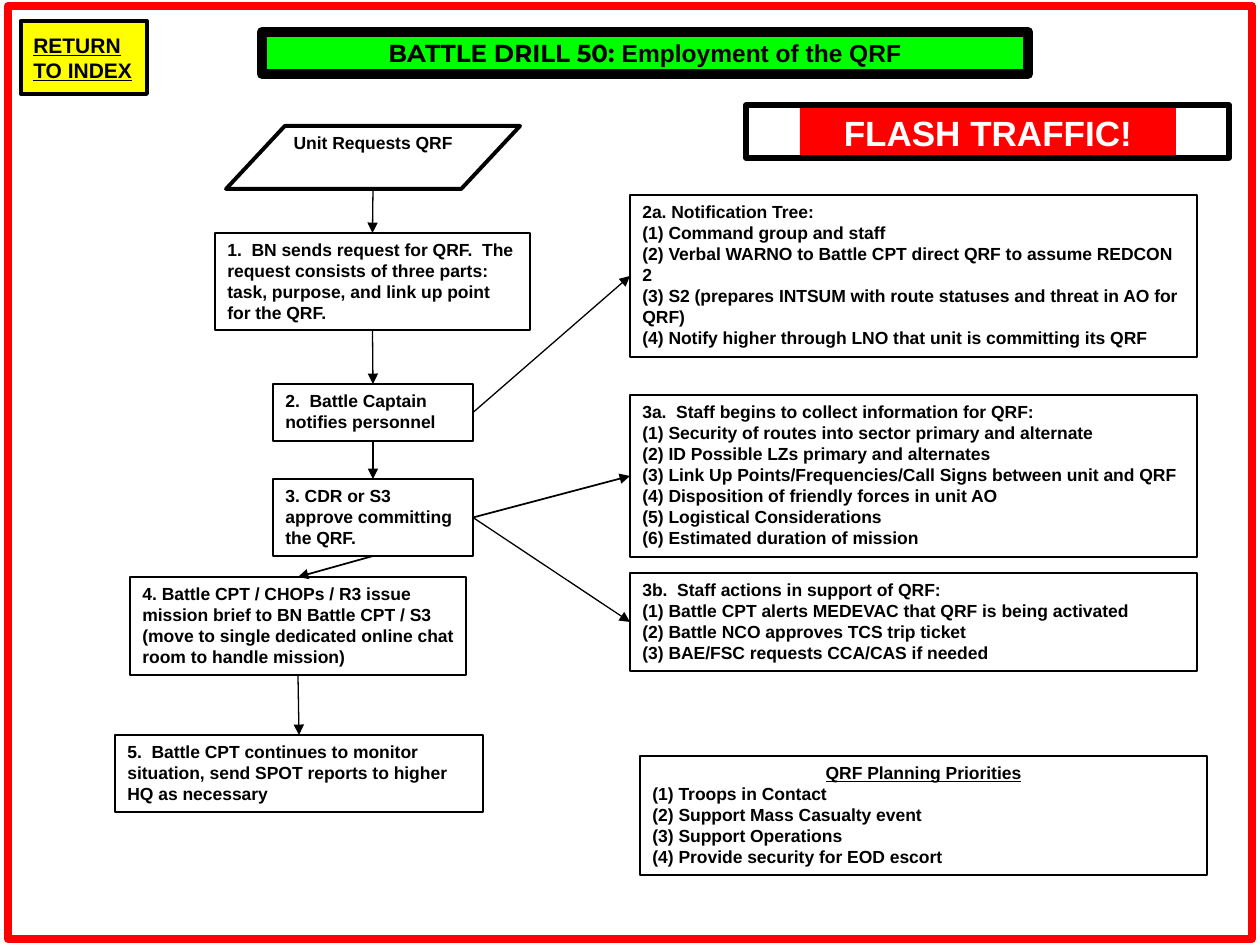
from lxml import etree
from pptx import Presentation
from pptx import util as u
from pptx.dml.color import RGBColor
from pptx.enum import shapes, text
from pptx.oxml.ns import qn

PX = 914400 / 126
RECT = shapes.MSO_SHAPE.RECTANGLE
SLANTED = shapes.MSO_SHAPE.FLOWCHART_DATA
LEFT, CENTER = text.PP_ALIGN.LEFT, text.PP_ALIGN.CENTER
TOP, MIDDLE = text.MSO_ANCHOR.TOP, text.MSO_ANCHOR.MIDDLE

TITLE = [("BATTLE DRILL 50:", "Montserrat"), (" Employment of the QRF", "Arial")]
TITLE_AREA = (262, 32, 766, 42)
BORDER_AREA = (8, 6, 1244, 933)
INDEX, INDEX_AREA = ["RETURN", "TO INDEX"], (21, 21, 126, 73)
FLASH, FLASH_AREA = ["FLASH TRAFFIC!"], (800, 105, 376, 54)
FLASH_FRAME_AREA = (746, 105, 483, 53)
REQUEST, REQUEST_AREA = ["Unit Requests QRF"], (226, 126, 294, 63)

# step: (left, top, width, height), paragraphs
STEPS = {
    "1": ((215, 233, 315, 97), [
        "1.  BN sends request for QRF.  The request consists of three parts: "
        "task, purpose, and link up point for the QRF."]),
    "2": ((273, 384, 200, 57), ["2.  Battle Captain notifies personnel"]),
    "3": ((273, 479, 200, 77), ["3. CDR or S3 approve committing the QRF."]),
    "4": ((130, 577, 336, 98), [
        "4. Battle CPT / CHOPs / R3 issue mission brief to BN Battle CPT / S3 "
        "(move to single dedicated online chat room to handle mission)"]),
    "5": ((115, 735, 368, 77), [
        "5.  Battle CPT continues to monitor situation, send SPOT reports to "
        "higher HQ as necessary"]),
    "2a": ((630, 195, 567, 162), [
        "2a. Notification Tree:",
        "(1) Command group and staff",
        "(2) Verbal WARNO to Battle CPT direct QRF to assume REDCON 2",
        "(3) S2 (prepares INTSUM with route statuses and threat in AO for QRF)",
        "(4) Notify higher through LNO that unit is committing its QRF"]),
    "3a": ((630, 395, 567, 162), [
        "3a.  Staff begins to collect information for QRF:",
        "(1) Security of routes into sector primary and alternate",
        "(2) ID Possible LZs primary and alternates",
        "(3) Link Up Points/Frequencies/Call Signs between unit and QRF",
        "(4) Disposition of friendly forces in unit AO",
        "(5) Logistical Considerations",
        "(6) Estimated duration of mission"]),
    "3b": ((630, 573, 567, 98), [
        "3b.  Staff actions in support of QRF:",
        "(1) Battle CPT alerts MEDEVAC that QRF is being activated",
        "(2) Battle NCO approves TCS trip ticket",
        "(3) BAE/FSC requests CCA/CAS if needed"]),
}
PRIORITIES_AREA = (640, 756, 567, 119)
PRIORITIES = [
    "QRF Planning Priorities",
    "(1) Troops in Contact",
    "(2) Support Mass Casualty event",
    "(3) Support Operations",
    "(4) Provide security for EOD escort"]

# from, to, line width in points
DOWN_ARROWS = [("request", "1", 0.75), ("1", "2", 0.75), ("2", "3", 0.75),
               ("3", "4", 1), ("4", "5", 0.75)]
SIDE_ARROWS = [("2", "2a", 0.75), ("3", "3a", 1), ("3", "3b", 0.75)]
SITE_TOP, SITE_LEFT, SITE_BOTTOM, SITE_RIGHT = range(4)


def emu(*lengths):
    return [round(length * PX) for length in lengths]


def color(hex_code):
    return RGBColor.from_string(hex_code)


def paint(shape, fill, line, weight):
    if fill:
        shape.fill.solid()
        shape.fill.fore_color.rgb = color(fill)
    else:
        shape.fill.background()
    if line:
        shape.line.color.rgb = color(line)
        shape.line.width = u.Pt(weight)
    else:
        shape.line.fill.background()


def style(paragraph, size, ink="000000", align=LEFT, underline=None):
    paragraph.alignment = align
    font = paragraph.font
    font.name, font.size, font.bold = "Arial", u.Pt(size), True
    font.underline = underline
    font.color.rgb = color(ink)


def add_box(slide, area, lines=(), kind=RECT, fill=None, line="000000", weight=1,
            anchor=TOP, **font):
    box = slide.shapes.add_shape(kind, *emu(*area))
    box.shadow.inherit = False
    paint(box, fill, line, weight)
    frame = box.text_frame
    frame.word_wrap = True
    frame.vertical_anchor = anchor
    for i, words in enumerate(lines):
        paragraph = frame.add_paragraph() if i else frame.paragraphs[0]
        paragraph.text = words
        style(paragraph, **{"size": 10, **font})
    return box


def add_arrow(slide, start, start_site, end, end_site, weight):
    def point(box, site):
        across = {SITE_LEFT: 0, SITE_RIGHT: box.width}.get(site, box.width // 2)
        down = {SITE_TOP: 0, SITE_BOTTOM: box.height}.get(site, box.height // 2)
        return box.left + across, box.top + down

    arrow = slide.shapes.add_connector(
        shapes.MSO_CONNECTOR.STRAIGHT, *point(start, start_site), *point(end, end_site))
    # The slanted shape numbers its connection sites differently.
    if start.auto_shape_type == RECT:
        arrow.begin_connect(start, start_site)
    arrow.end_connect(end, end_site)
    arrow.line.color.rgb = color("000000")
    arrow.line.width = u.Pt(weight)
    etree.SubElement(arrow.line._get_or_add_ln(), qn("a:tailEnd"), type="triangle")
    etree.SubElement(arrow._element.spPr, qn("a:effectLst"))


def set_title(slide):
    title = slide.shapes.title
    title.left, title.top, title.width, title.height = emu(*TITLE_AREA)
    paint(title, "00FF00", "000000", 6)
    frame = title.text_frame
    frame.auto_size = text.MSO_AUTO_SIZE.NONE
    frame.word_wrap = True
    frame.vertical_anchor = MIDDLE
    paragraph = frame.paragraphs[0]
    for words, typeface in TITLE:
        run = paragraph.add_run()
        run.text, run.font.name = words, typeface
    style(paragraph, 14, align=CENTER)


def main():
    deck = Presentation()
    deck.slide_width, deck.slide_height = u.Inches(10), u.Inches(7.5)
    slide = deck.slides.add_slide(deck.slide_layouts[5])

    add_box(slide, BORDER_AREA, line="FF0000", weight=4.5)
    index = add_box(slide, INDEX_AREA, INDEX, fill="FFFF00", weight=2.25,
                    anchor=MIDDLE, size=12, underline=True)
    index.text_frame.word_wrap = False
    set_title(slide)
    add_box(slide, FLASH_AREA, FLASH, fill="FF0000", line=None,
            size=20, ink="FFFFFF", align=CENTER)
    add_box(slide, FLASH_FRAME_AREA, weight=3)

    request = add_box(slide, REQUEST_AREA, REQUEST, SLANTED, weight=2.25, align=CENTER)
    request.text_frame.margin_left = request.text_frame.margin_right = 0
    boxes = {"request": request}
    for step, (area, lines) in STEPS.items():
        boxes[step] = add_box(slide, area, lines)
    priorities = add_box(slide, PRIORITIES_AREA, PRIORITIES)
    style(priorities.text_frame.paragraphs[0], 10, align=CENTER, underline=True)

    for start, end, weight in DOWN_ARROWS:
        add_arrow(slide, boxes[start], SITE_BOTTOM, boxes[end], SITE_TOP, weight)
    for start, end, weight in SIDE_ARROWS:
        add_arrow(slide, boxes[start], SITE_RIGHT, boxes[end], SITE_LEFT, weight)
    deck.save("out.pptx")


if __name__ == "__main__":
    main()
